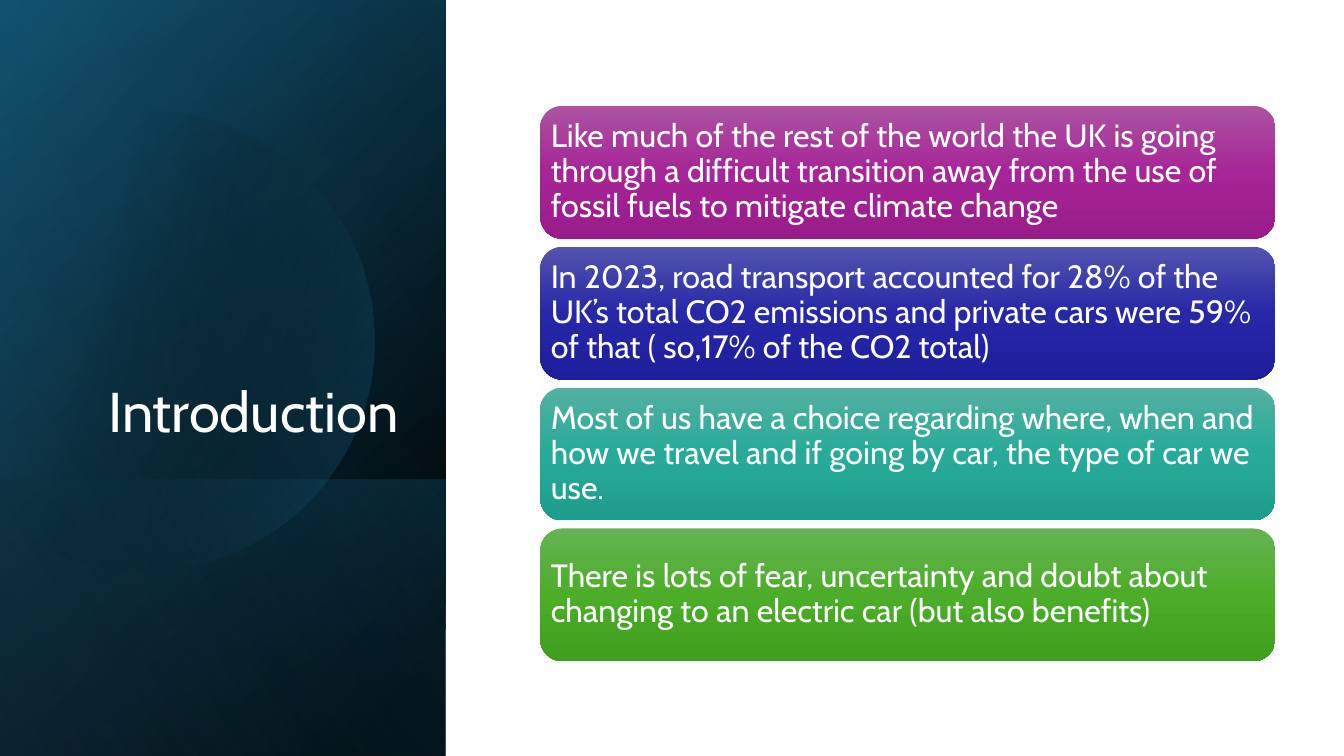
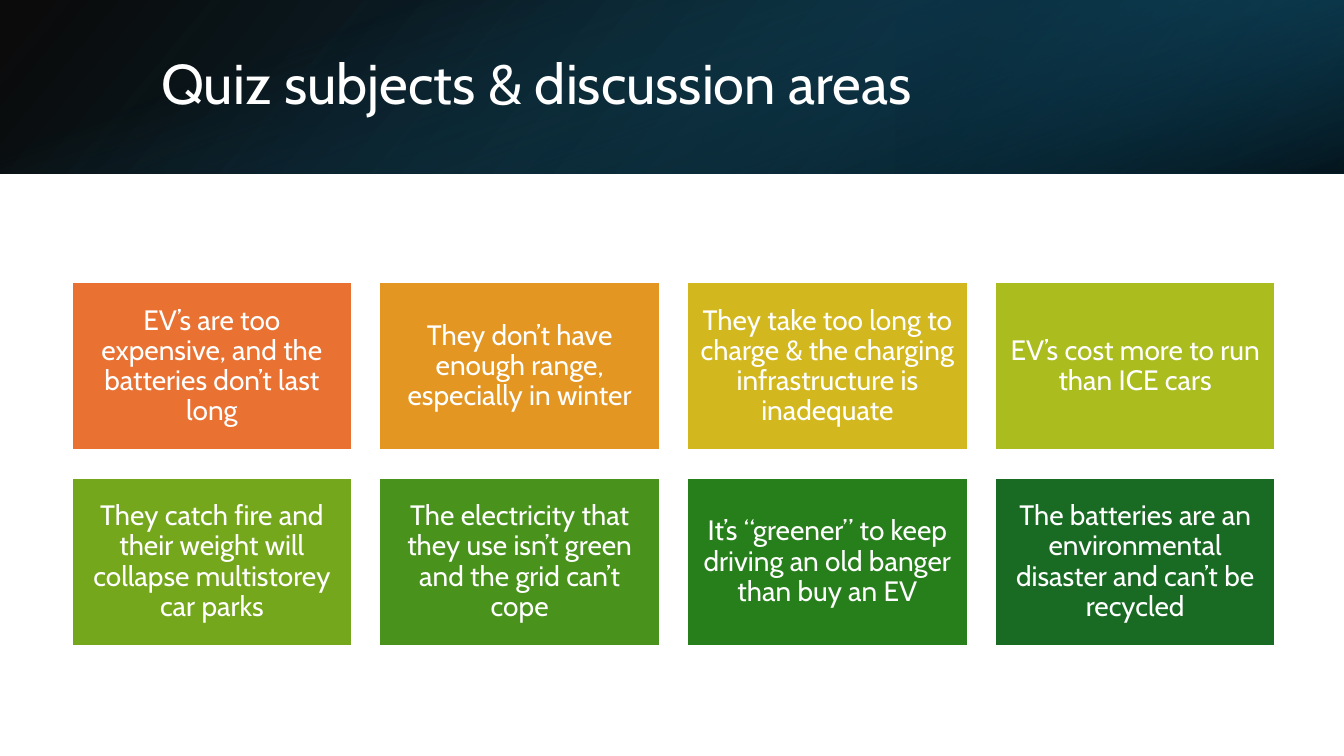
from dataclasses import dataclass
from math import acos, cos, sin

from lxml import etree
from pptx import Presentation
from pptx.dml.color import RGBColor
from pptx.enum.shapes import MSO_SHAPE
from pptx.enum.text import MSO_ANCHOR, PP_ALIGN
from pptx.oxml.ns import qn
from pptx.util import Inches, Pt

RECTANGLE, ROUNDED = MSO_SHAPE.RECTANGLE, MSO_SHAPE.ROUNDED_RECTANGLE
LEFT, CENTER, RIGHT = PP_ALIGN.LEFT, PP_ALIGN.CENTER, PP_ALIGN.RIGHT
MIDDLE, BOTTOM = MSO_ANCHOR.MIDDLE, MSO_ANCHOR.BOTTOM

WIDTH, HEIGHT = Inches(13.33), Inches(7.5)


@dataclass(frozen=True)
class Theme:
    font: str = "Cabin"
    title_size: int = 40
    card_size: int = 23
    tile_size: int = 20
    line_spacing: float = 0.9
    white: str = "FFFFFF"
    black: str = "000000"
    teal: str = "156082"
    deep_teal: str = "104862"
    night: str = "0B3041"
    sky: str = "46B1E1"
    cards: tuple = (
        ("AC53A0", "A62598", "991C8B"),
        ("5354AE", "2628A8", "1D1E9B"),
        ("53B0A1", "27AB98", "1D9D8B"),
        ("66B354", "4BAD28", "409F1E"),
    )
    tiles: tuple = ("E97132", "E49622", "D2B81E", "ABBC1E",
                    "75A71D", "49931D", "277F1B", "196B24")


THEME = Theme()

# Areas are left, top, width, height in percent of the slide.
SIDE = (0, 0, 33.16, 100)
SIDE_FOOT = (0, 63.47, 33.16, 36.53)
SIDE_TITLE = (4.8, 24.53, 25.58, 34.93)
CARD_AREA = (40.2, 14, 54.69, 73.47)
HEADER = (0, 0, 100, 22.93)
HEADER_END = (66.67, 0, 33.33, 22.93)
HEADER_TITLE = (11.25, 5.07, 82.37, 12.8)
TILE_AREA = (5.33, 37.33, 89.57, 48.13)
CARD_GAP, TILE_GAP = Inches(0.08), Inches(0.27)

CARDS = (
    "Like much of the rest of the world the UK is going through a difficult "
    "transition away from the use of fossil fuels to mitigate climate change",
    "In 2023, road transport accounted for 28% of the UK’s total CO2 emissions "
    "and private cars were 59% of that ( so,17% of the CO2 total)",
    "Most of us have a choice regarding where, when and how we travel and if "
    "going by car, the type of car we use.",
    "There is lots of fear, uncertainty and doubt about changing to an "
    "electric car (but also benefits)",
)
TILES = (
    "EV’s are too expensive, and the batteries don’t last long",
    "They don’t have enough range, especially in winter",
    "They take too long to charge & the charging infrastructure is inadequate",
    "EV’s cost more to run than ICE cars",
    "They catch fire and their weight will collapse multistorey car parks",
    "The electricity that they use isn’t green and the grid can’t cope",
    "It’s “greener” to keep driving an old banger than buy an EV",
    "The batteries are an environmental disaster and can’t be recycled",
)


def place(area):
    left, top, width, height = area
    return (round(WIDTH * left / 100), round(HEIGHT * top / 100),
            round(WIDTH * width / 100), round(HEIGHT * height / 100))


def grid_cells(area, columns, rows, gap):
    """Yield the boxes of a grid, row by row."""
    left, top, width, height = place(area)
    cell_width = (width - gap * (columns - 1)) // columns
    cell_height = (height - gap * (rows - 1)) // rows
    for index in range(columns * rows):
        row, column = divmod(index, columns)
        yield (left + column * (cell_width + gap),
               top + row * (cell_height + gap), cell_width, cell_height)


def paint_gradient(shape, stops, angle):
    """Fill with (position, colour, opacity) stops; the angle runs clockwise."""
    shape.shadow.inherit = False
    shape.line.fill.background()
    shape.fill.gradient()
    shape.fill.gradient_angle = (360 - angle) % 360
    stop_list = shape._element.spPr.find(".//" + qn("a:gsLst"))
    for old_stop in list(stop_list):
        stop_list.remove(old_stop)
    for position, colour, opacity in stops:
        stop = etree.SubElement(stop_list, qn("a:gs"), pos=str(position * 1000))
        paint = etree.SubElement(stop, qn("a:srgbClr"), val=colour)
        if opacity < 100:
            etree.SubElement(paint, qn("a:alpha"), val=str(opacity * 1000))


def add_panel(slide, area, stops, angle, turn=0, flip=False):
    """Cover the area with a gradient rectangle that is turned in place."""
    left, top, width, height = place(area)
    if turn == 90:
        left, top = left + (width - height) // 2, top + (height - width) // 2
        width, height = height, width
    panel = slide.shapes.add_shape(RECTANGLE, left, top, width, height)
    panel.rotation = turn
    if flip:
        panel._element.spPr.xfrm.set("flipH", "1")
    paint_gradient(panel, stops, angle)


def add_disc(slide, stops, angle):
    """Draw a large disc cut off by the left edge of the slide."""
    center_x, center_y, radius = Inches(1.43), Inches(3.38), Inches(2.28)
    half_sweep = acos(-center_x / radius)
    steps = 90
    turns = [half_sweep * (2 * step / steps - 1) for step in range(steps + 1)]
    points = [(round(center_x + radius * cos(turn)),
               round(center_y + radius * sin(turn))) for turn in turns]
    outline = slide.shapes.build_freeform(*points[0])
    outline.add_line_segments(points[1:], close=True)
    paint_gradient(outline.convert_to_shape(), stops, angle)


def write(shape, text, size, align, anchor, inset=None):
    frame = shape.text_frame
    frame.word_wrap = True
    frame.vertical_anchor = anchor
    if inset is not None:
        frame.margin_left = frame.margin_right = Inches(inset)
        frame.margin_top = frame.margin_bottom = Inches(inset)
    frame.text = text
    para = frame.paragraphs[0]
    para.alignment = align
    para.line_spacing = THEME.line_spacing
    font = para.runs[0].font
    font.name, font.size = THEME.font, Pt(size)
    font.color.rgb = RGBColor.from_string(THEME.white)


def add_title(slide, area, text, align, anchor):
    box = slide.shapes.add_textbox(*place(area))
    write(box, text, THEME.title_size, align, anchor)


def add_card(slide, cell, text, colours):
    card = slide.shapes.add_shape(ROUNDED, *cell)
    stops = [(position, colour, 100)
             for position, colour in zip((0, 50, 100), colours)]
    paint_gradient(card, stops, 90)
    write(card, text, THEME.card_size, LEFT, MIDDLE, inset=0.04)


def add_tile(slide, cell, text, colour):
    tile = slide.shapes.add_shape(RECTANGLE, *cell)
    tile.shadow.inherit = False
    tile.fill.solid()
    tile.fill.fore_color.rgb = RGBColor.from_string(colour)
    tile.line.color.rgb = RGBColor.from_string(THEME.white)
    tile.line.width = Pt(1.5)
    write(tile, text, THEME.tile_size, CENTER, MIDDLE, inset=0.08)


def build_introduction(slide):
    black, teal = THEME.black, THEME.teal
    add_panel(slide, SIDE, [(8, black, 100), (100, THEME.deep_teal, 100)],
              50, turn=90, flip=True)
    add_panel(slide, SIDE, [(0, black, 0), (99, teal, 46)],
              30, turn=90, flip=True)
    add_panel(slide, SIDE_FOOT, [(2, teal, 29), (100, black, 30)],
              130, turn=90, flip=True)
    add_disc(slide, [(29, black, 0), (100, teal, 43)], 14)
    add_panel(slide, SIDE, [(0, black, 0), (99, THEME.sky, 11)],
              120, turn=90, flip=True)
    add_title(slide, SIDE_TITLE, "Introduction", RIGHT, BOTTOM)
    cells = grid_cells(CARD_AREA, 1, len(CARDS), CARD_GAP)
    for cell, text, colours in zip(cells, CARDS, THEME.cards):
        add_card(slide, cell, text, colours)


def build_quiz_subjects(slide):
    black, teal = THEME.black, THEME.teal
    add_panel(slide, HEADER, [(0, black, 96), (100, THEME.deep_teal, 100)],
              140, flip=True)
    add_panel(slide, HEADER_END, [(19, THEME.night, 68), (100, teal, 79)],
              320, turn=180, flip=True)
    add_panel(slide, HEADER, [(23, teal, 0), (99, black, 74)], 340, turn=90)
    add_title(slide, HEADER_TITLE, "Quiz subjects & discussion areas",
              LEFT, MIDDLE)
    cells = grid_cells(TILE_AREA, 4, 2, TILE_GAP)
    for cell, text, colour in zip(cells, TILES, THEME.tiles):
        add_tile(slide, cell, text, colour)


def main():
    deck = Presentation()
    deck.slide_width, deck.slide_height = WIDTH, HEIGHT
    blank = deck.slide_layouts[6]
    for build in (build_introduction, build_quiz_subjects):
        build(deck.slides.add_slide(blank))
    deck.save("out.pptx")


if __name__ == "__main__":
    main()
